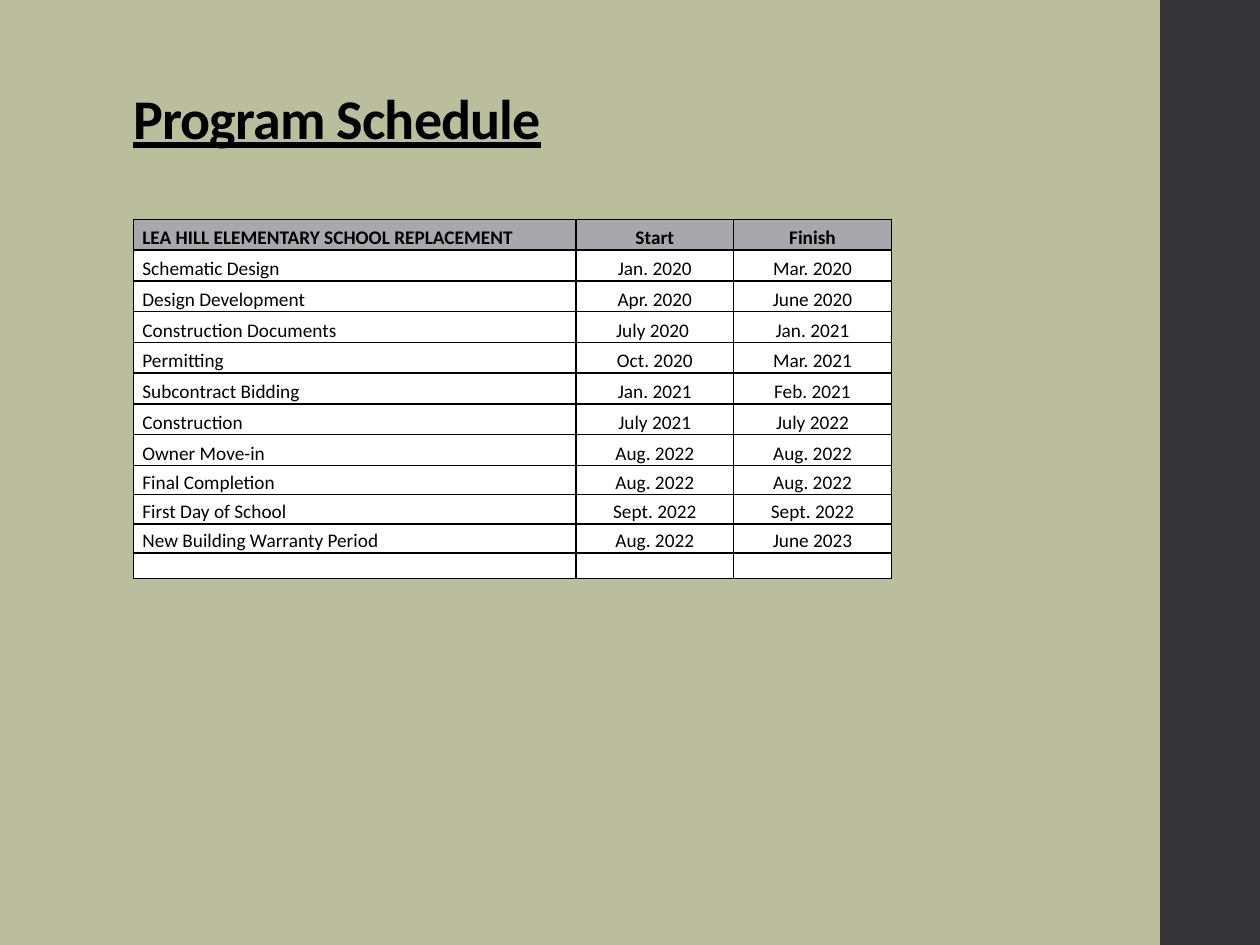
from dataclasses import dataclass
from typing import Any

import lxml.etree
import pptx
import pptx.dml.color
import pptx.enum.shapes
import pptx.enum.text
import pptx.oxml
import pptx.oxml.ns
import pptx.util

Cm = pptx.util.Cm
Pt = pptx.util.Pt
qn = pptx.oxml.ns.qn
ALIGN = pptx.enum.text.PP_ALIGN
ANCHOR = pptx.enum.text.MSO_ANCHOR


@dataclass(frozen=True)
class Theme:
    font: str = "Calibri"
    background: str = "BBBE9C"
    sidebar: str = "353537"
    ink: str = "000000"
    header: str = "A8A8AC"
    body: str = "FFFFFF"
    title_size: int = 32
    table_size: int = 11
    border: int = 1


@dataclass(frozen=True)
class Phase:
    name: str
    start: str
    finish: str
    height: float = 0.62
    header: bool = False


THEME = Theme()
COLUMN_WIDTHS = (8.92, 3.18, 3.18)
PHASES = (
    Phase("LEA HILL ELEMENTARY SCHOOL REPLACEMENT", "Start", "Finish", header=True),
    Phase("Schematic Design", "Jan. 2020", "Mar. 2020"),
    Phase("Design Development", "Apr. 2020", "June 2020"),
    Phase("Construction Documents", "July 2020 ", "Jan. 2021"),
    Phase("Permitting", "Oct. 2020", "Mar. 2021"),
    Phase("Subcontract Bidding", "Jan. 2021", "Feb. 2021"),
    Phase("Construction", "July 2021", "July 2022"),
    Phase("Owner Move-in", "Aug. 2022", "Aug. 2022"),
    Phase("Final Completion", "Aug. 2022", "Aug. 2022", 0.59),
    Phase("First Day of School", "Sept. 2022", "Sept. 2022", 0.59),
    Phase("New Building Warranty Period", "Aug. 2022", "June 2023", 0.59),
    Phase("", "", "", 0.51),
)


def rgb(value: str) -> pptx.dml.color.RGBColor:
    return pptx.dml.color.RGBColor.from_string(value)


def write_text(tf: Any, text: str, *, size: int, bold: bool = False,
               underline: bool = False, align: Any = ALIGN.LEFT,
               space: float = 0, line: float = 1.0, tracking: float = 0) -> None:
    p = tf.paragraphs[0]
    p.alignment = align
    p.line_spacing = line
    if not text:
        lxml.etree.SubElement(p._p, qn("a:endParaRPr"), sz=str(size * 100))
        return
    p.space_before = p.space_after = Pt(space)
    r = p.add_run()
    r.text = text
    r.font.name = THEME.font
    r.font.size = Pt(size)
    r.font.bold = bold
    r.font.underline = underline
    r.font.color.rgb = rgb(THEME.ink)
    if tracking:
        r._r.get_or_add_rPr().set("spc", str(round(tracking * 100)))


def add_borders(cell: Any) -> None:
    tc_pr = cell._tc.get_or_add_tcPr()
    for i, side in enumerate(("lnL", "lnR", "lnT", "lnB")):
        ln = lxml.etree.Element(qn(f"a:{side}"), w=str(Pt(THEME.border)))
        fill = lxml.etree.SubElement(ln, qn("a:solidFill"))
        lxml.etree.SubElement(fill, qn("a:srgbClr"), val=THEME.ink)
        tc_pr.insert(i, ln)


def add_cell(cell: Any, text: str, phase: Phase, align: Any) -> None:
    cell.margin_left = cell.margin_right = Cm(0.18)
    cell.margin_top = cell.margin_bottom = 0
    cell.vertical_anchor = ANCHOR.BOTTOM
    cell.fill.solid()
    cell.fill.fore_color.rgb = rgb(THEME.header if phase.header else THEME.body)
    add_borders(cell)
    write_text(cell.text_frame, text, size=THEME.table_size,
               bold=phase.header, align=align, space=2)


def add_schedule(s: Any, left: float, top: float) -> None:
    table = s.shapes.add_table(
        len(PHASES), len(COLUMN_WIDTHS), Cm(left), Cm(top),
        Cm(sum(COLUMN_WIDTHS)), Cm(sum(phase.height for phase in PHASES))).table
    for column, width in zip(table.columns, COLUMN_WIDTHS):
        column.width = Cm(width)
    for row, phase in zip(table.rows, PHASES):
        row.height = Cm(phase.height)
        for i, text in enumerate((phase.name, phase.start, phase.finish)):
            add_cell(row.cells[i], text, phase, ALIGN.CENTER if i else ALIGN.LEFT)


def add_sidebar(s: Any, left: float, width: float, height: float) -> None:
    sp = s.shapes.add_shape(pptx.enum.shapes.MSO_SHAPE.RECTANGLE,
                            Cm(left), 0, Cm(width), Cm(height))
    sp.shadow.inherit = False
    sp.fill.solid()
    sp.fill.fore_color.rgb = rgb(THEME.sidebar)
    sp.line.fill.background()


def add_title(s: Any, text: str) -> None:
    tf = s.shapes.add_textbox(Cm(2.44), Cm(1.02), Cm(18.44), Cm(2.16)).text_frame
    tf.word_wrap = True
    tf.vertical_anchor = ANCHOR.BOTTOM
    write_text(tf, text, size=THEME.title_size, bold=True, underline=True,
               line=0.9, tracking=-0.5)


def main() -> None:
    prs = pptx.Presentation()
    prs.slide_width, prs.slide_height = Cm(25.4), Cm(19.05)
    s = prs.slides.add_slide(prs.slide_layouts[6])
    s.background.fill.solid()
    s.background.fill.fore_color.rgb = rgb(THEME.background)
    add_sidebar(s, 23.39, 2.01, 19.05)
    add_title(s, "Program Schedule")
    add_schedule(s, 2.69, 4.42)
    prs.save("out.pptx")


if __name__ == "__main__":
    main()
